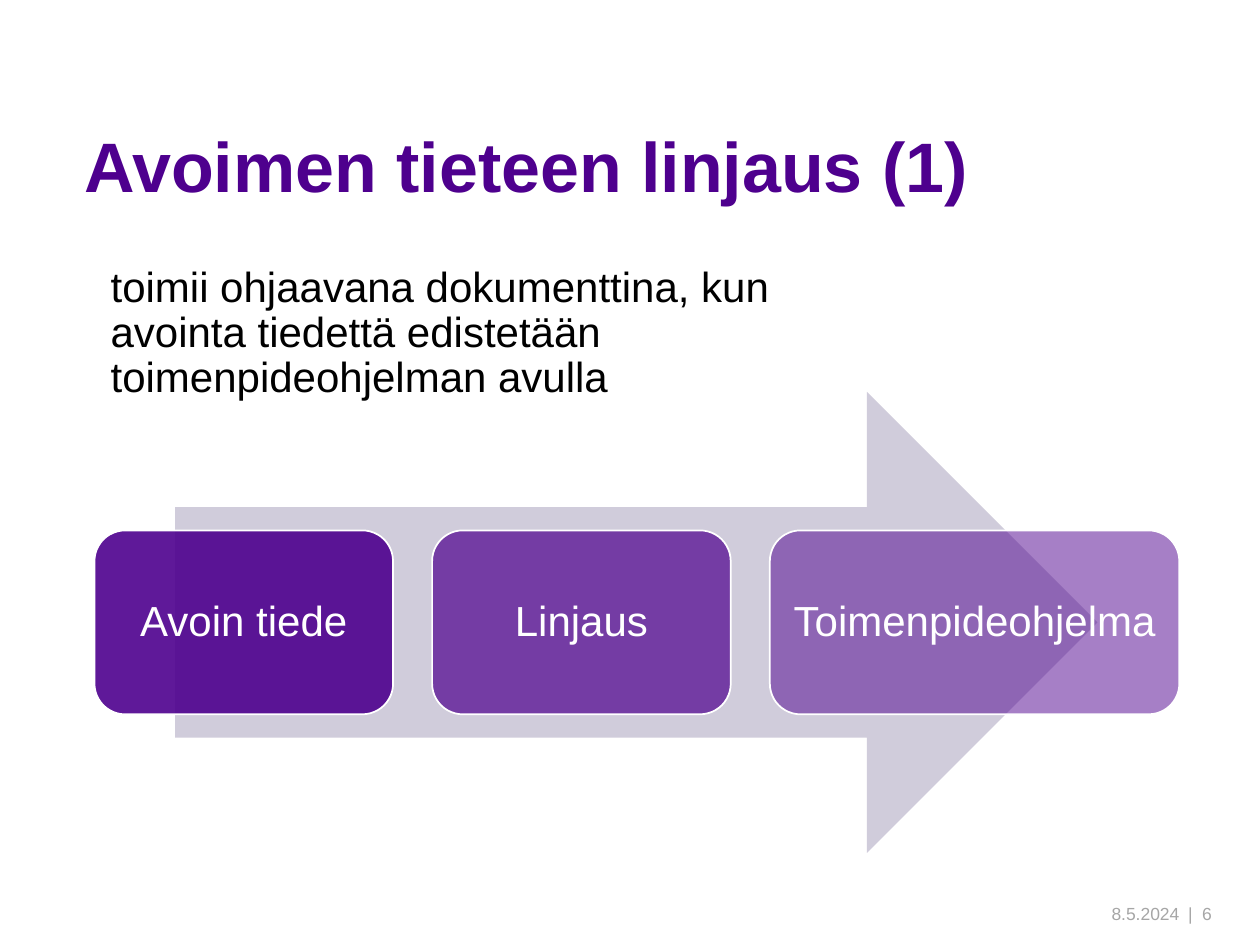
from dataclasses import dataclass

from lxml import etree
from pptx import Presentation
from pptx.dml.color import RGBColor
from pptx.enum.shapes import MSO_SHAPE
from pptx.enum.text import MSO_ANCHOR, MSO_AUTO_SIZE, PP_ALIGN
from pptx.oxml.ns import qn
from pptx.util import Inches, Pt

ARROW, ROUNDED = MSO_SHAPE.RIGHT_ARROW, MSO_SHAPE.ROUNDED_RECTANGLE
LEFT, CENTER, RIGHT = PP_ALIGN.LEFT, PP_ALIGN.CENTER, PP_ALIGN.RIGHT
TOP, MIDDLE, BOTTOM = MSO_ANCHOR.TOP, MSO_ANCHOR.MIDDLE, MSO_ANCHOR.BOTTOM


@dataclass(frozen=True)
class Theme:
    font: str = "Arial"
    purple: str = "4E008E"
    arrow: str = "D0CCDB"
    white: str = "FFFFFF"
    black: str = "000000"
    grey: str = "A6A6A6"
    title_size: int = 40
    text_size: int = 24
    footer_size: int = 10
    line_spacing: float = 0.9


THEME = Theme()
STEPS = [  # label, width, opacity in percent
    ("Avoin tiede", 2.37, 90),
    ("Linjaus", 2.37, 70),
    ("Toimenpideohjelma", 3.25, 50),
]
STEP_LEFT, STEP_TOP, STEP_HEIGHT, STEP_GAP = 0.75, 4.21, 1.46, 0.31


def color(code):
    return RGBColor.from_string(code)


def write(shape, text, size, ink, align=LEFT, anchor=TOP, insets=(0.1, 0.05),
          spacing=None, bold=False, tab=None):
    """Fill a shape with one paragraph; insets are horizontal and vertical."""
    frame = shape.text_frame
    frame.word_wrap = True
    frame.auto_size = MSO_AUTO_SIZE.NONE
    frame.vertical_anchor = anchor
    frame.margin_left = frame.margin_right = Inches(insets[0])
    frame.margin_top = frame.margin_bottom = Inches(insets[1])
    para = frame.paragraphs[0]
    para.alignment = align
    if spacing:
        para.line_spacing = spacing
    if tab:
        stops = etree.SubElement(para._p.get_or_add_pPr(), qn("a:tabLst"))
        etree.SubElement(stops, qn("a:tab"), pos=str(Inches(tab)), algn="l")
    span = para.add_run()
    span.text = text
    span.font.name = THEME.font
    span.font.size = Pt(size)
    span.font.bold = bold
    span.font.color.rgb = color(ink)


def add_text(page, area, *args, **style):
    box = page.shapes.add_textbox(*map(Inches, area))
    write(box, *args, **style)


def add_block(page, kind, area, fill, opacity=100, outline=None):
    block = page.shapes.add_shape(kind, *map(Inches, area))
    block.shadow.inherit = False
    block.fill.solid()
    block.fill.fore_color.rgb = color(fill)
    if opacity < 100:
        tint = block.fill._xPr.find(qn("a:solidFill"))[0]
        etree.SubElement(tint, qn("a:alpha"), val=str(opacity * 1000))
    if outline:
        block.line.color.rgb = color(outline)
        block.line.width = Pt(1)
    else:
        block.line.fill.background()
    return block


def add_title(page, text):
    title = page.shapes.title
    title.left, title.top, title.width, title.height = map(
        Inches, (0.57, 0.99, 8.98, 0.71))
    write(title, text, THEME.title_size, THEME.purple, anchor=MIDDLE,
          spacing=THEME.line_spacing, bold=True)


def add_process(page):
    add_block(page, ARROW, (1.39, 3.11, 7.32, 3.66), THEME.arrow)
    left = STEP_LEFT
    for label, width, opacity in STEPS:
        step = add_block(page, ROUNDED, (left, STEP_TOP, width, STEP_HEIGHT),
                         THEME.purple, opacity, THEME.white)
        write(step, label, THEME.text_size, THEME.white, CENTER, MIDDLE,
              insets=(0.05, 0.05), spacing=THEME.line_spacing)
        left += width + STEP_GAP


def add_footer(page):
    look = dict(anchor=BOTTOM, insets=(0, 0.05))
    add_text(page, (7.97, 7.1, 1.39, 0.28), "8.5.2024",
             THEME.footer_size, THEME.grey, align=RIGHT, **look)
    add_text(page, (9.43, 7.1, 0.41, 0.28), "|\t6",
             THEME.footer_size, THEME.grey, tab=0.11, **look)


def main():
    deck = Presentation()
    deck.slide_width, deck.slide_height = Inches(10), Inches(7.5)
    page = deck.slides.add_slide(deck.slide_layouts[5])
    add_title(page, "Avoimen tieteen linjaus (1)")
    add_text(page, (0.78, 2.06, 6.33, 3.38),
             "toimii ohjaavana dokumenttina, kun avointa tiedettä edistetään "
             "toimenpideohjelman avulla",
             THEME.text_size, THEME.black, spacing=THEME.line_spacing)
    add_process(page)
    add_footer(page)
    deck.save("out.pptx")


if __name__ == "__main__":
    main()
